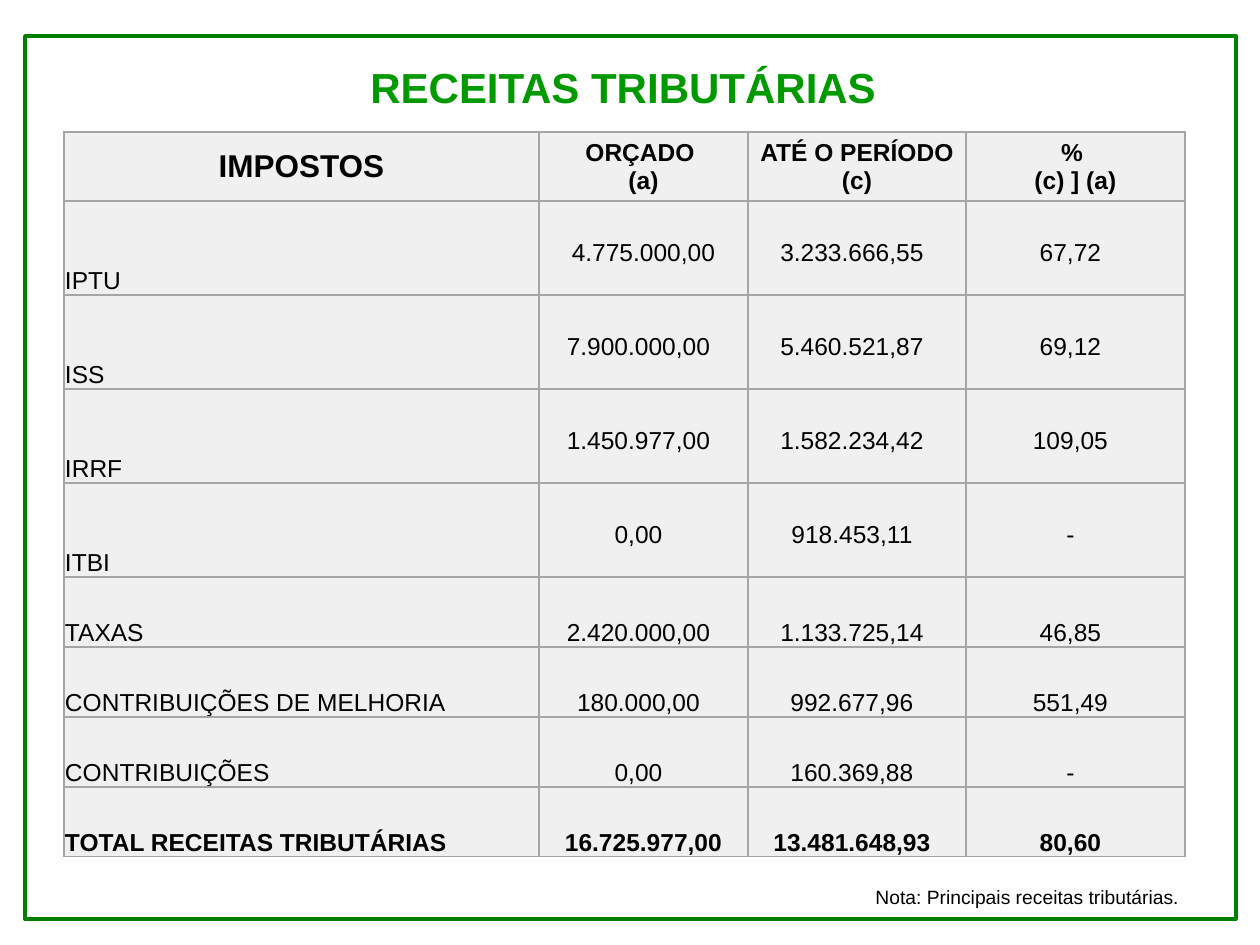
from dataclasses import dataclass

from lxml import etree
from pptx import Presentation
from pptx import util as u
from pptx.dml.color import RGBColor
from pptx.enum import shapes, text
from pptx.oxml.ns import qn

PX = u.Inches(1) / 126


@dataclass(frozen=True)
class Theme:
    font: str = "Arial"
    ink: str = "000000"
    title_green: str = "009900"
    frame_green: str = "008000"
    cell_fill: str = "F0F0F0"
    cell_line: str = "A5A5A5"
    title_size: int = 24
    lead_size: int = 18
    table_size: int = 14
    note_size: int = 11


THEME = Theme()
CENTER, LEFT, JUSTIFY = text.PP_ALIGN.CENTER, text.PP_ALIGN.LEFT, text.PP_ALIGN.JUSTIFY
MIDDLE, BOTTOM = text.MSO_ANCHOR.MIDDLE, text.MSO_ANCHOR.BOTTOM

COLUMN_WIDTHS = [475, 209, 218, 219]
ROW_HEIGHTS = [69] + [94] * 4 + [70] * 4
VALUE_INDENT = 11
RAISED_GAP = 28  # one text line below the values of the tall rows
HEADERS = ["IMPOSTOS", "ORÇADO \n(a)", "ATÉ O PERÍODO (c)", "% \n(c) ] (a)"]
REVENUES = [
    ["IPTU", "4.775.000,00", "3.233.666,55", "67,72"],
    ["ISS", "7.900.000,00", "5.460.521,87", "69,12"],
    ["IRRF", "1.450.977,00", "1.582.234,42", "109,05"],
    ["ITBI", "0,00", "918.453,11", "-"],
    ["TAXAS", "2.420.000,00", "1.133.725,14", "46,85"],
    ["CONTRIBUIÇÕES DE MELHORIA", "180.000,00", "992.677,96", "551,49"],
    ["CONTRIBUIÇÕES", "0,00", "160.369,88", "-"],
    ["TOTAL RECEITAS TRIBUTÁRIAS", "16.725.977,00", "13.481.648,93", "80,60"],
]


def px(*lengths):
    return [u.Emu(round(length * PX)) for length in lengths]


def write(frame, wording, size, color=THEME.ink, bold=False, align=LEFT):
    frame.text = wording
    for para in frame.paragraphs:
        para.alignment = align
        para.font.name = THEME.font
        para.font.size = u.Pt(size)
        para.font.bold = bold
        para.font.color.rgb = RGBColor.from_string(color)


def add_title(page, wording):
    title = page.shapes.title
    title.left, title.top, title.width, title.height = px(118, 55, 1022, 63)
    write(title.text_frame, wording, THEME.title_size, THEME.title_green, True, CENTER)
    title.text_frame.vertical_anchor = text.MSO_ANCHOR.TOP
    title.text_frame.auto_size = text.MSO_AUTO_SIZE.SHAPE_TO_FIT_TEXT


def outline_cell(cell):
    properties = cell._tc.get_or_add_tcPr()
    for side in ("a:lnL", "a:lnR", "a:lnT", "a:lnB"):
        line = etree.SubElement(properties, qn(side), w=str(u.Pt(1)))
        fill = etree.SubElement(line, qn("a:solidFill"))
        etree.SubElement(fill, qn("a:srgbClr"), val=THEME.cell_line)


def format_cell(cell, anchor, right=1, bottom=0):
    outline_cell(cell)
    cell.fill.solid()
    cell.fill.fore_color.rgb = RGBColor.from_string(THEME.cell_fill)
    cell.vertical_anchor = anchor
    (cell.margin_left, cell.margin_top,
     cell.margin_right, cell.margin_bottom) = px(1, 1, right, bottom)


def add_revenue_table(page):
    table = page.shapes.add_table(
        len(ROW_HEIGHTS), len(COLUMN_WIDTHS),
        *px(64, 132, sum(COLUMN_WIDTHS), sum(ROW_HEIGHTS))).table
    for column, width in zip(table.columns, COLUMN_WIDTHS):
        column.width, = px(width)
    for row, height in zip(table.rows, ROW_HEIGHTS):
        row.height, = px(height)

    for index, header in enumerate(HEADERS):
        cell = table.cell(0, index)
        format_cell(cell, MIDDLE)
        size = THEME.table_size if index else THEME.lead_size
        write(cell.text_frame, header, size, bold=True, align=CENTER)

    for number, revenue in enumerate(REVENUES, 1):
        total = number == len(REVENUES)
        for index, value in enumerate(revenue):
            cell = table.cell(number, index)
            flush = index == 1 and (number == 1 or total)
            raised = index > 0 and number <= 4
            format_cell(cell, BOTTOM, 1 if flush else VALUE_INDENT,
                        RAISED_GAP if raised else 0)
            align = CENTER if index else LEFT if total else JUSTIFY
            write(cell.text_frame, value, THEME.table_size, bold=total, align=align)


def add_border(page):
    border = page.shapes.add_shape(shapes.MSO_SHAPE.RECTANGLE, *px(25, 36, 1211, 883))
    border.shadow.inherit = False
    border.fill.background()
    border.line.color.rgb = RGBColor.from_string(THEME.frame_green)
    border.line.width = u.Pt(2)


def add_note(page, wording):
    box = page.shapes.add_textbox(*px(863, 879, 397, 36))
    box.text_frame.word_wrap = True
    box.text_frame.auto_size = text.MSO_AUTO_SIZE.SHAPE_TO_FIT_TEXT
    write(box.text_frame, wording, THEME.note_size)


def main():
    deck = Presentation()
    deck.slide_width, deck.slide_height = px(1260, 945)
    page = deck.slides.add_slide(deck.slide_layouts.get_by_name("Title Only"))
    add_title(page, "RECEITAS TRIBUTÁRIAS ")
    add_revenue_table(page)
    add_border(page)
    add_note(page, "Nota: Principais receitas tributárias.")
    deck.save("out.pptx")


if __name__ == "__main__":
    main()
